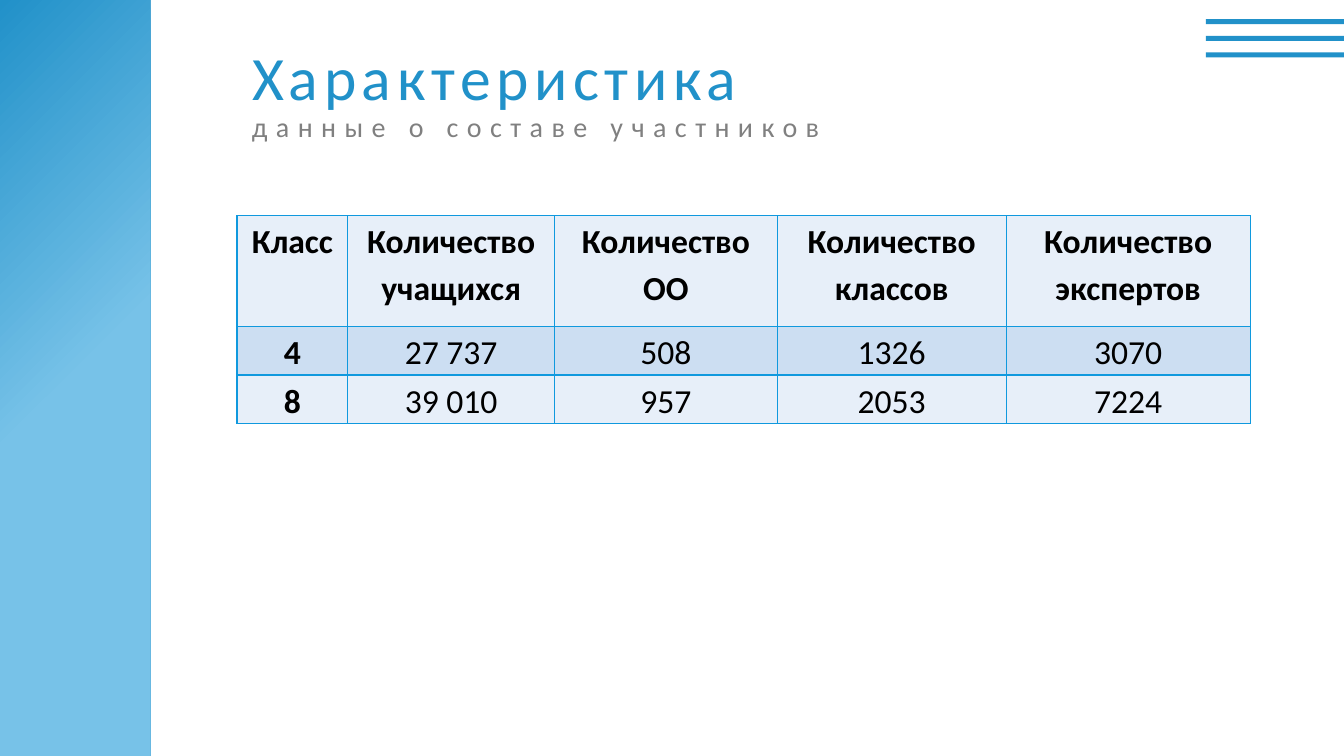
from lxml.etree import SubElement as Sub
from pptx import Presentation
from pptx.dml.color import RGBColor as Rgb
from pptx.enum.shapes import MSO_SHAPE as Kind
from pptx.enum.text import MSO_ANCHOR as Anchor, MSO_AUTO_SIZE as Auto, PP_ALIGN as Align
from pptx.oxml.ns import qn
from pptx.util import Inches, Pt

HUES = {
    "blue": "2191C9", "sky": "77C2E8", "gray": "808080", "black": "000000",
    "edge": "1099DE", "pale": "E7EFF9", "band": "CCDEF2",
}
HEAD = ["Класс", "Количество учащихся", "Количество ОО",
        "Количество классов", "Количество экспертов"]
ROWS = [HEAD,
        ["4", "27 737", "508", "1326", "3070"],
        ["8", "39 010", "957", "2053", "7224"]]
WIDTHS = [1.1, 2.05, 2.21, 2.27, 2.42]
HEIGHTS = [1.1, 0.48, 0.48]


def hue(name):
    return Rgb.from_string(HUES[name])


def adjust(item, form):
    for key, value in form.items():
        setattr(item, key, value)


class Deck:
    """Holds the style and the current slide."""

    font = "Calibri"

    def __init__(self, wide, high):
        self.deck = Presentation()
        adjust(self.deck, {"slide_width": Inches(wide), "slide_height": Inches(high)})
        self.slide = self.deck.slides.add_slide(self.deck.slide_layouts[5])

    def text(self, frame, words, size, color, bold=False, track=0, lead=0.9,
             align=Align.LEFT):
        para = frame.paragraphs[0]
        adjust(para, {"alignment": align, "line_spacing": lead, "space_before": Pt(0)})
        run = para.add_run()
        run.text = words
        adjust(run.font, {"name": self.font, "size": Pt(size), "bold": bold})
        run.font.color.rgb = hue(color)
        if track:
            run.font._element.set("spc", str(track * 100))

    def place(self, shape, box, anchor):
        sides = ("left", "top", "width", "height")
        adjust(shape, dict(zip(sides, map(Inches, box))))
        adjust(shape.text_frame, {"word_wrap": True, "auto_size": Auto.NONE,
                                  "vertical_anchor": anchor})
        return shape.text_frame

    def title(self, words, box, **form):
        self.text(self.place(self.slide.shapes.title, box, Anchor.BOTTOM), words, **form)

    def label(self, words, box, **form):
        shape = self.slide.shapes.add_textbox(*map(Inches, box))
        self.text(self.place(shape, box, Anchor.TOP), words, **form)

    def bar(self, box, color, end=None):
        shape = self.slide.shapes.add_shape(Kind.RECTANGLE, *map(Inches, box))
        shape.shadow.inherit = False
        shape.line.fill.background()
        if not end:
            shape.fill.solid()
            shape.fill.fore_color.rgb = hue(color)
            return
        # Diagonal blend that settles halfway
        shape.fill.gradient()
        shape.fill.gradient_angle = 315
        for stop, name, spot in zip(shape.fill.gradient_stops, (color, end), (0, 0.5)):
            stop.color.rgb = hue(name)
            stop.position = spot

    def edges(self, cell, color):
        props = cell._tc.get_or_add_tcPr()
        for side in ("lnL", "lnR", "lnT", "lnB"):
            line = Sub(props, qn("a:" + side), w=str(Pt(1)))
            Sub(Sub(line, qn("a:solidFill")), qn("a:srgbClr"), val=HUES[color])

    def table(self, rows, spot, widths, heights):
        box = (*spot, sum(widths), sum(heights))
        grid = self.slide.shapes.add_table(len(rows), len(widths), *map(Inches, box)).table
        for col, wide in zip(grid.columns, widths):
            col.width = Inches(wide)
        for row, high in zip(grid.rows, heights):
            row.height = Inches(high)
        for r, row in enumerate(rows):
            for c, words in enumerate(row):
                cell = grid.cell(r, c)
                adjust(cell, {"margin_left": Inches(0.07), "margin_right": Inches(0.07),
                              "margin_top": 0, "margin_bottom": 0})
                self.edges(cell, "edge")
                cell.fill.solid()
                cell.fill.fore_color.rgb = hue("band" if r % 2 else "pale")
                self.text(cell.text_frame, words, 24, "black", bold=r == 0 or c == 0,
                          lead=1.15, align=Align.CENTER)


def main():
    page = Deck(13.33, 7.5)
    # Corner stripes and side panel
    for i in range(3):
        page.bar((11.96, 0.19 + i * 0.165, 1.37, 0.05), "blue")
    page.bar((0, 0, 1.49, 7.5), "blue", end="sky")
    # Headings
    page.title("Характеристика", (2.4, 0.33, 9.56, 0.85), size=44, color="blue", track=4)
    page.label("данные о составе участников", (2.4, 1.08, 9.56, 0.47),
               size=20, color="gray", track=6)
    # Participant figures
    page.table(ROWS, (2.35, 2.14), WIDTHS, HEIGHTS)
    page.deck.save("out.pptx")


if __name__ == "__main__":
    main()
